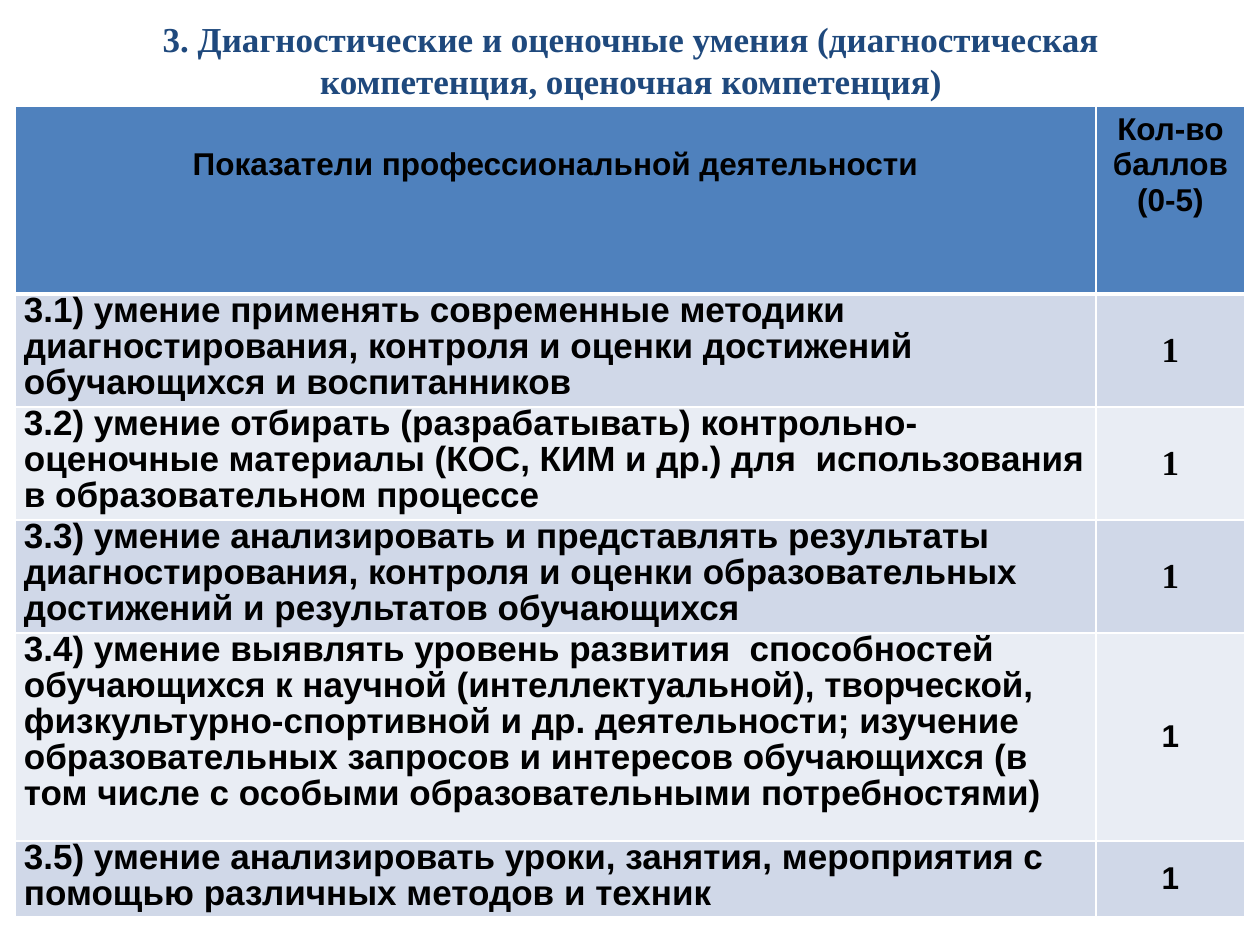
"""Build a slide with a score table for diagnostic and assessment skills."""
from lxml import etree
from pptx import Presentation
from pptx import util as u
from pptx.dml.color import RGBColor
from pptx.enum import text
from pptx.oxml.ns import qn

SCALE = 914400 / 126
NAVY = RGBColor(0x1F, 0x49, 0x7D)
BLUE = RGBColor(0x4F, 0x81, 0xBD)
BANDS = RGBColor(0xD0, 0xD8, 0xE8), RGBColor(0xE9, 0xED, 0xF4)
BLACK = RGBColor(0, 0, 0)
WHITE = RGBColor(0xFF, 0xFF, 0xFF)
SANS, SERIF = "Arial", "Times New Roman"
MID = text.MSO_ANCHOR.MIDDLE
TOP = text.MSO_ANCHOR.TOP
LEFT, CENTER = text.PP_ALIGN.LEFT, text.PP_ALIGN.CENTER

TITLE = ("3. Диагностические и оценочные умения (диагностическая "
         "компетенция, оценочная компетенция)")
HEADS = "Показатели профессиональной деятельности", "Кол-во баллов (0-5)"
SKILLS = [
    ("3.1) умение применять современные методики диагностирования, контроля "
     "и оценки достижений обучающихся и воспитанников", "1", SERIF, 20),
    ("3.2) умение отбирать (разрабатывать) контрольно-оценочные материалы "
     "(КОС, КИМ и др.) для  использования в образовательном процессе",
     "1", SERIF, 20),
    ("3.3) умение анализировать и представлять результаты диагностирования, "
     "контроля и оценки образовательных достижений и результатов обучающихся",
     "1", SERIF, 20),
    ("3.4) умение выявлять уровень развития  способностей обучающихся к "
     "научной (интеллектуальной), творческой, физкультурно-спортивной и др. "
     "деятельности; изучение образовательных запросов и интересов "
     "обучающихся (в том числе с особыми образовательными потребностями)",
     "1", SANS, 18),
    ("3.5) умение анализировать уроки, занятия, мероприятия с помощью "
     "различных методов и техник", "1", SANS, 18),
]
COLS = 1081, 149
ROWS = 188, 113, 113, 113, 208, 76


def px(num):
    """Turn whole pixels into EMU."""
    return u.Emu(round(num * SCALE))


def write(frame, words, size=20, font=SANS, color=BLACK, align=CENTER,
          space=None):
    """Fill a text frame with one bold paragraph."""
    para = frame.paragraphs[0]
    para.alignment = align
    para.line_spacing = space
    run = para.add_run()
    run.text = words
    run.font.size = u.Pt(size)
    run.font.name = font
    run.font.bold = True
    run.font.color.rgb = color


def edge(cell, side, width):
    """Draw one white border of a cell."""
    props = cell._tc.get_or_add_tcPr()
    line = etree.SubElement(props, qn(f"a:ln{side}"), w=str(u.Pt(width)))
    fill = etree.SubElement(line, qn("a:solidFill"))
    etree.SubElement(fill, qn("a:srgbClr"), val=str(WHITE))


def dress(cell, color, pads, anchor=TOP, over=1, under=1):
    """Set the borders, fill, margins and anchor of a cell."""
    for side, width in zip("LRTB", (1, 1, over, under)):
        edge(cell, side, width)
    cell.fill.solid()
    cell.fill.fore_color.rgb = color
    cell.margin_left = cell.margin_right = px(pads[0])
    cell.margin_top, cell.margin_bottom = px(pads[1]), px(pads[2])
    cell.vertical_anchor = anchor


def add_title(slide):
    """Place and format the slide title."""
    title = slide.shapes.title
    title.left, title.top = px(64), px(16)
    title.width, title.height = px(1134), px(87)
    frame = title.text_frame
    frame.word_wrap = True
    frame.auto_size = text.MSO_AUTO_SIZE.NONE
    frame.vertical_anchor = MID
    write(frame, TITLE, font=SERIF, color=NAVY)


def add_scores(slide):
    """Add the table of skills and their scores."""
    table = slide.shapes.add_table(len(ROWS), len(COLS), px(15), px(106),
                                   px(sum(COLS)), px(sum(ROWS))).table
    for col, width in zip(table.columns, COLS):
        col.width = px(width)
    for row, height in zip(table.rows, ROWS):
        row.height = px(height)
    for col, (head, top) in enumerate(zip(HEADS, (41, 6))):
        cell = table.cell(0, col)
        dress(cell, BLUE, (13, top, 6), under=3)
        write(cell.text_frame, head, size=18)
    for row, (skill, score, font, size) in enumerate(SKILLS, 1):
        color = BANDS[(row - 1) % 2]
        over = 3 if row == 1 else 1
        name, mark = table.cell(row, 0), table.cell(row, 1)
        dress(name, color, (9, 0, 0), over=over)
        write(name.text_frame, skill, align=LEFT, space=0.92)
        dress(mark, color, (9, 0, 0), anchor=MID, over=over)
        write(mark.text_frame, score, size=size, font=font)


def main():
    """Build and save the slide."""
    deck = Presentation()
    deck.slide_width, deck.slide_height = px(1260), px(945)
    slide = deck.slides.add_slide(deck.slide_layouts[5])
    add_title(slide)
    add_scores(slide)
    deck.save("out.pptx")


if __name__ == "__main__":
    main()
